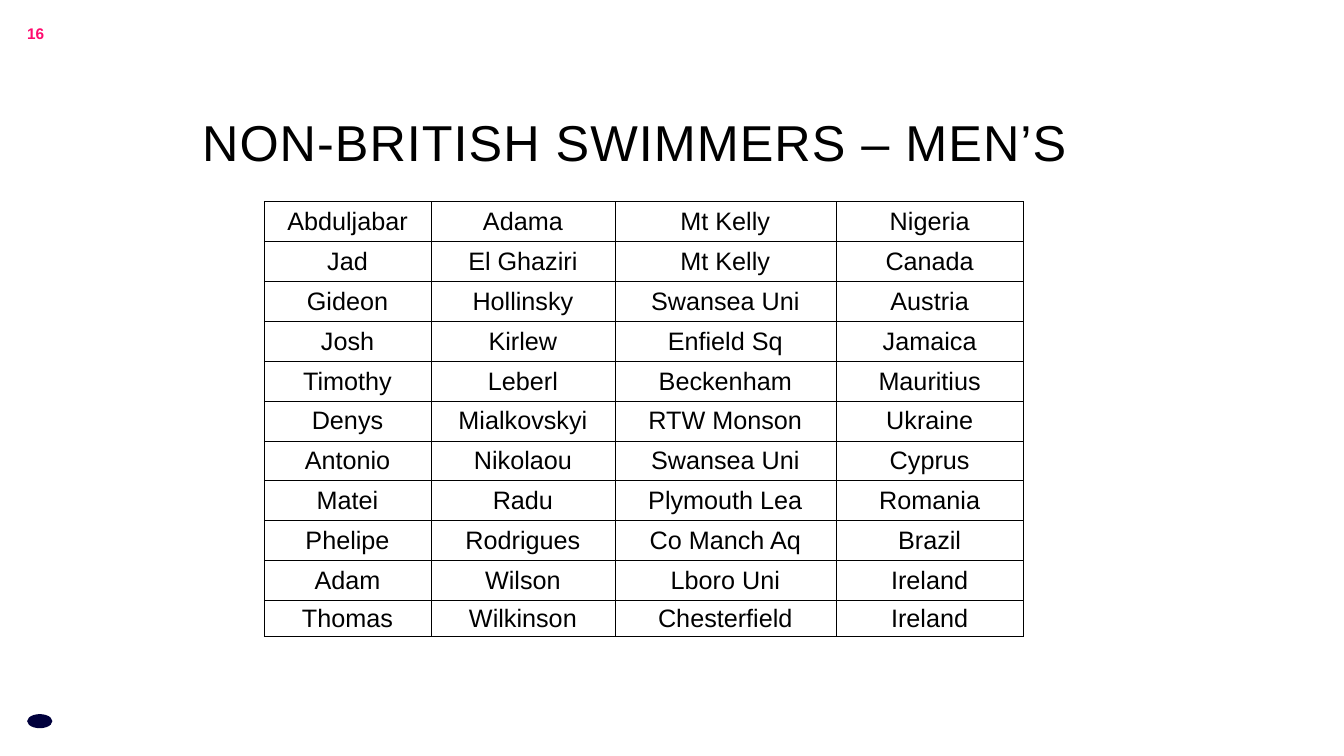
from dataclasses import dataclass

from lxml import etree
from pptx import Presentation
from pptx.dml.color import RGBColor
from pptx.enum.shapes import MSO_SHAPE
from pptx.enum.text import MSO_ANCHOR, PP_ALIGN
from pptx.oxml.ns import qn
from pptx.util import Cm, Pt

LEFT, CENTER = PP_ALIGN.LEFT, PP_ALIGN.CENTER
TOP, MIDDLE, BOTTOM = MSO_ANCHOR.TOP, MSO_ANCHOR.MIDDLE, MSO_ANCHOR.BOTTOM
OVAL = MSO_SHAPE.OVAL


@dataclass(frozen=True)
class Theme:
    font: str = "Arial"
    ink: str = "000000"
    pink: str = "FF0A6E"
    navy: str = "00003C"
    title: int = 72
    body: int = 36
    small: int = 22
    rule: float = 0.5


class Deck:
    def __init__(self, slide, theme):
        self.slide = slide
        self.theme = theme

    def style(self, par, size, color, align, bold=False):
        par.alignment = align
        for run in par.runs:
            font = run.font
            font.name = self.theme.font
            font.size = Pt(size)
            font.bold = bold
            font.color.rgb = RGBColor.from_string(color)

    def text(self, words, box, size, color, align=LEFT, anchor=TOP, bold=False):
        frame = self.slide.shapes.add_textbox(*map(Cm, box)).text_frame
        frame.word_wrap = True
        frame.margin_left = frame.margin_right = 0
        frame.margin_top = frame.margin_bottom = 0
        frame.vertical_anchor = anchor
        frame.text = words
        par = frame.paragraphs[0]
        self.style(par, size, color, align, bold)
        return par

    def title(self, words, box):
        par = self.text(words, box, self.theme.title, self.theme.ink, CENTER, BOTTOM)
        par.line_spacing = 0.88
        for run in par.runs:
            run.font._element.set("spc", "150")

    def badge(self, box):
        shape = self.slide.shapes.add_shape(OVAL, *map(Cm, box))
        shape.shadow.inherit = False
        shape.fill.solid()
        shape.fill.fore_color.rgb = RGBColor.from_string(self.theme.navy)
        shape.line.fill.background()

    def border(self, cell):
        props = cell._tc.get_or_add_tcPr()
        for side in ("lnL", "lnR", "lnT", "lnB"):
            line = etree.SubElement(props, qn(f"a:{side}"), w=str(Pt(self.theme.rule)))
            fill = etree.SubElement(line, qn("a:solidFill"))
            etree.SubElement(fill, qn("a:srgbClr"), val=self.theme.ink)

    def table(self, data, left, top, widths, heights):
        table = self.slide.shapes.add_table(
            len(data), len(widths), Cm(left), Cm(top),
            Cm(sum(widths)), Cm(sum(heights))).table
        table.first_row = table.horz_banding = False
        for col, width in zip(table.columns, widths):
            col.width = Cm(width)
        for row, height, words in zip(table.rows, heights, data):
            row.height = Cm(height)
            for cell, word in zip(row.cells, words):
                self.border(cell)
                cell.fill.background()
                cell.margin_left = cell.margin_right = cell.margin_top = Cm(0.03)
                cell.margin_bottom = 0
                cell.vertical_anchor = MIDDLE
                cell.text = word
                par = cell.text_frame.paragraphs[0]
                self.style(par, self.theme.body, self.theme.ink, CENTER)


SWIMMERS = [
    ("Abduljabar", "Adama", "Mt Kelly", "Nigeria"),
    ("Jad", "El Ghaziri", "Mt Kelly", "Canada"),
    ("Gideon", "Hollinsky", "Swansea Uni", "Austria"),
    ("Josh", "Kirlew", "Enfield Sq", "Jamaica"),
    ("Timothy", "Leberl", "Beckenham", "Mauritius"),
    ("Denys", "Mialkovskyi", "RTW Monson", "Ukraine"),
    ("Antonio", "Nikolaou", "Swansea Uni", "Cyprus"),
    ("Matei", "Radu", "Plymouth Lea", "Romania"),
    ("Phelipe", "Rodrigues", "Co Manch Aq", "Brazil"),
    ("Adam", "Wilson", "Lboro Uni", "Ireland"),
    ("Thomas", "Wilkinson", "Chesterfield", "Ireland"),
]


def main():
    show = Presentation()
    show.slide_width, show.slide_height = Cm(67.74), Cm(38.1)
    theme = Theme()
    deck = Deck(show.slides.add_slide(show.slide_layouts[6]), theme)
    deck.badge((1.37, 35.99, 1.27, 0.71))
    deck.text("16", (1.37, 1.24, 1.3, 0.94), theme.small, theme.pink, bold=True)
    deck.title("NON-BRITISH SWIMMERS – MEN’S ", (4.34, 5.97, 56.08, 2.72))
    heights = [2.01] * (len(SWIMMERS) - 1) + [1.83]
    deck.table(SWIMMERS, 13.31, 10.16, (8.41, 9.27, 11.13, 9.47), heights)
    show.save("out.pptx")


if __name__ == "__main__":
    main()
